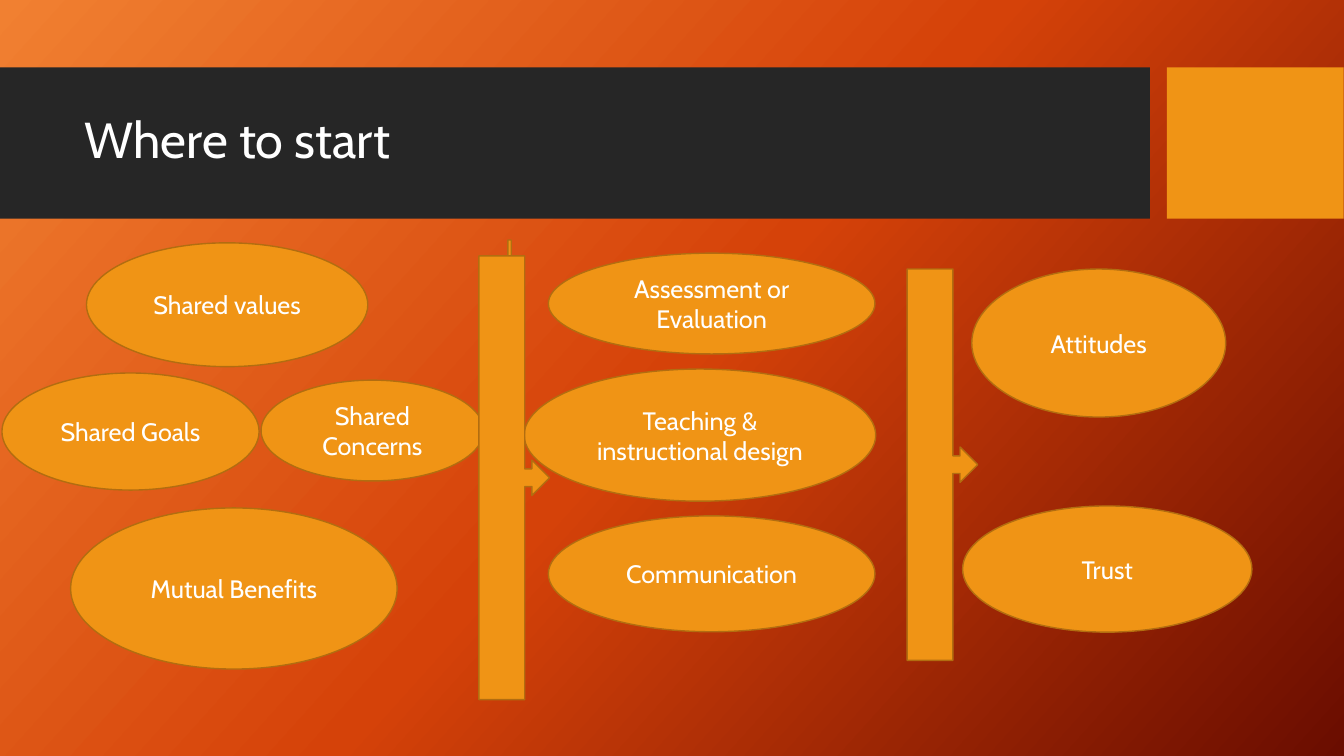
from copy import deepcopy

from pptx import Presentation
from pptx.dml.color import RGBColor
from pptx.enum.shapes import MSO_SHAPE as SHAPE
from pptx.enum.text import MSO_ANCHOR as ANCHOR, PP_ALIGN as ALIGN
from pptx.oxml.ns import qn
from pptx.util import Cm, Pt

ORANGE, OUTLINE, WHITE = "F09415", "B26D10", "FFFFFF"


def write(target, text, size=18, align=ALIGN.CENTER, spacing=None):
    frame = target.text_frame
    frame.word_wrap = True
    frame.vertical_anchor = ANCHOR.MIDDLE
    paragraph = frame.paragraphs[0]
    paragraph.alignment = align
    paragraph.line_spacing = spacing
    run = paragraph.add_run()
    run.text = text
    run.font.name = "Cabin"
    run.font.size = Pt(size)
    run.font.color.rgb = RGBColor.from_string(WHITE)


def draw(kind, box, fill=ORANGE, outline=None):
    shape = slide.shapes.add_shape(kind, *map(Cm, box))
    shape.shadow.inherit = False
    shape.fill.solid()
    shape.fill.fore_color.rgb = RGBColor.from_string(fill)
    if outline:
        shape.line.color.rgb = RGBColor.from_string(outline)
        shape.line.width = Pt(1)
    else:
        shape.line.fill.background()
    return shape


deck = Presentation()
deck.slide_width, deck.slide_height = Cm(33.87), Cm(19.05)
slide = deck.slides.add_slide(deck.slide_layouts[6])

# Background gradient with a third, middle stop
backdrop = slide.background.fill
backdrop.gradient()
backdrop.gradient_angle = 360 - 42
stop_list = slide.element.find(".//" + qn("a:gsLst"))
stop_list.insert(1, deepcopy(stop_list[0]))
glow = [(0, "F18031"), (0.5, "D54209"), (1, "6A0D00")]
for stop, (position, color) in zip(backdrop.gradient_stops, glow):
    stop.position = position
    stop.color.rgb = RGBColor.from_string(color)

# Title band
draw(SHAPE.RECTANGLE, (0, 1.7, 28.98, 3.81), fill="262626")
draw(SHAPE.RECTANGLE, (29.41, 1.7, 4.45, 3.81))
title = slide.shapes.add_textbox(Cm(1.88), Cm(2.08), Cm(26.7), Cm(3))
write(title, "Where to start", size=36, align=ALIGN.LEFT, spacing=0.9)

# Ideas: common ground, practice, outcomes
ideas = [
    ("Shared values", (2.18, 6.12, 7.09, 3.12)),
    ("Shared Goals", (0.05, 9.4, 6.48, 2.95)),
    ("Shared Concerns", (6.58, 9.58, 5.61, 2.54)),
    ("Mutual Benefits", (1.78, 12.8, 8.23, 4.06)),
    ("Assessment or Evaluation", (13.82, 6.38, 8.23, 2.54)),
    ("Teaching & instructional design", (13.21, 9.3, 8.86, 3.33)),
    ("Communication", (13.82, 13, 8.23, 2.92)),
    ("Attitudes", (24.49, 6.78, 6.4, 3.73)),
    ("Trust", (24.26, 12.75, 7.29, 3.18)),
]
for label, box in ideas:
    write(draw(SHAPE.OVAL, box, outline=OUTLINE), label)

# Callout arrows leading from one column to the next
sliver = draw(SHAPE.RIGHT_ARROW_CALLOUT, (12.8, 6.05, 0.13, 10.29), outline=OUTLINE)
sliver.adjustments[1] = 0.526
for box in [(22.86, 6.78, 1.78, 9.86), (12.07, 6.45, 1.78, 11.18)]:
    draw(SHAPE.RIGHT_ARROW_CALLOUT, box, outline=OUTLINE)

deck.save("out.pptx")
